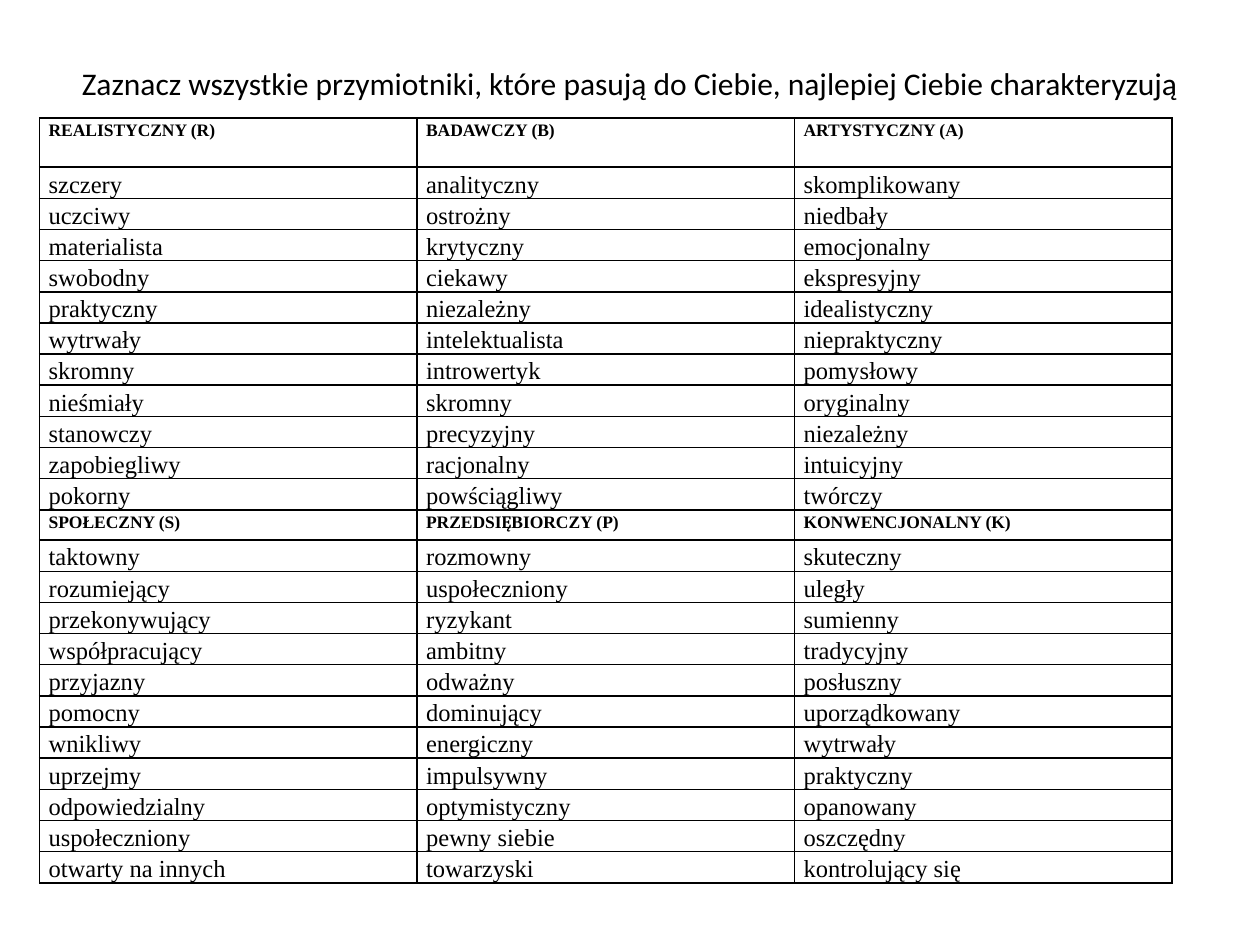
import pptx
import pptx.util
import pptx.dml.color
import pptx.enum.text
import pptx.oxml
import pptx.oxml.ns

Cm = pptx.util.Cm
Pt = pptx.util.Pt

COLORS = {"text": "000000", "border": "000000"}
TITLE_FONT = "Calibri"
TABLE_FONT = "Times New Roman"
ACCENT_FONT = "Cambria"

TITLE = "Zaznacz wszystkie przymiotniki, które pasują do Ciebie, najlepiej Ciebie charakteryzują"

GROUPS = [
    (
        [["REALISTYCZNY (R)"], ["BADAWCZY (B)"], ["ARTYSTYCZNY (A)"]],
        [
            ("szczery", "analityczny", "skomplikowany"),
            ("uczciwy", "ostrożny", "niedbały"),
            ("materialista", "krytyczny", "emocjonalny"),
            ("swobodny", "ciekawy", "ekspresyjny"),
            ("praktyczny", "niezależny", "idealistyczny"),
            ("wytrwały", "intelektualista", "niepraktyczny"),
            ("skromny", "introwertyk", "pomysłowy"),
            ("nieśmiały", "skromny", "oryginalny"),
            ("stanowczy", "precyzyjny", "niezależny"),
            ("zapobiegliwy", "racjonalny", "intuicyjny"),
            ("pokorny", "powściągliwy", "twórczy"),
        ],
    ),
    (
        [["SPOŁECZNY (S)"], ["PRZEDSI", "Ę", "BIORCZY (P)"], ["KONWENCJONALNY (K)"]],
        [
            ("taktowny", "rozmowny", "skuteczny"),
            ("rozumiejący", "uspołeczniony", "uległy"),
            ("przekonywujący", "ryzykant", "sumienny"),
            ("współpracujący", "ambitny", "tradycyjny"),
            ("przyjazny", "odważny", "posłuszny"),
            ("pomocny", "dominujący", "uporządkowany"),
            ("wnikliwy", "energiczny", "wytrwały"),
            ("uprzejmy", "impulsywny", "praktyczny"),
            ("odpowiedzialny", "optymistyczny", "opanowany"),
            ("uspołeczniony", "pewny siebie", "oszczędny"),
            ("otwarty na innych", "towarzyski", "kontrolujący się"),
        ],
    ),
]


def add_run(p, text, font, size, bold=False):
    r = p.add_run()
    r.text = text
    r.font.name = font
    r.font.size = Pt(size)
    r.font.bold = bold
    r.font.color.rgb = pptx.dml.color.RGBColor.from_string(COLORS["text"])


def add_title(s):
    sp = s.shapes.title
    sp.left, sp.top, sp.width, sp.height = Cm(1.27), Cm(0.76), Cm(22.86), Cm(1.83)
    tf = sp.text_frame
    tf.word_wrap = True
    tf.vertical_anchor = pptx.enum.text.MSO_ANCHOR.MIDDLE
    p = tf.paragraphs[0]
    p.alignment = pptx.enum.text.PP_ALIGN.CENTER
    add_run(p, TITLE, TITLE_FONT, 18)


def set_borders(cell):
    tcPr = cell._tc.get_or_add_tcPr()
    for side in ("lnL", "lnR", "lnT", "lnB"):
        tcPr.append(pptx.oxml.parse_xml(
            f'<a:{side} {pptx.oxml.ns.nsdecls("a")} w="{Pt(1)}"><a:solidFill>'
            f'<a:srgbClr val="{COLORS["border"]}"/></a:solidFill></a:{side}>'
        ))


def fill_cell(cell, parts, size, bold):
    cell.margin_left = cell.margin_right = Cm(0.18)
    cell.margin_top = cell.margin_bottom = 0
    set_borders(cell)
    cell.fill.background()
    p = cell.text_frame.paragraphs[0]
    p.line_spacing = 1.15
    for text in parts:
        add_run(p, text, ACCENT_FONT if text == "Ę" else TABLE_FONT, size, bold)


def add_adjective_table(s):
    rows = []
    for headings, adjectives in GROUPS:
        rows.append((headings, 10, True))
        rows += [([[word] for word in words], 14, False) for words in adjectives]
    heights = [Cm(0.99)] + [Cm(0.61)] * (len(rows) - 1)
    table = s.shapes.add_table(
        len(rows), 3, Cm(0.8), Cm(2.38), Cm(22.82), sum(heights)
    ).table
    table.first_row = False
    table.horz_banding = False
    for column in table.columns:
        column.width = Cm(7.61)
    for i, (cells, size, bold) in enumerate(rows):
        table.rows[i].height = heights[i]
        for j, parts in enumerate(cells):
            fill_cell(table.cell(i, j), parts, size, bold)


def main():
    prs = pptx.Presentation()
    prs.slide_width, prs.slide_height = Cm(25.4), Cm(19.05)
    s = prs.slides.add_slide(prs.slide_layouts[5])
    add_title(s)
    add_adjective_table(s)
    prs.save("out.pptx")


if __name__ == "__main__":
    main()
